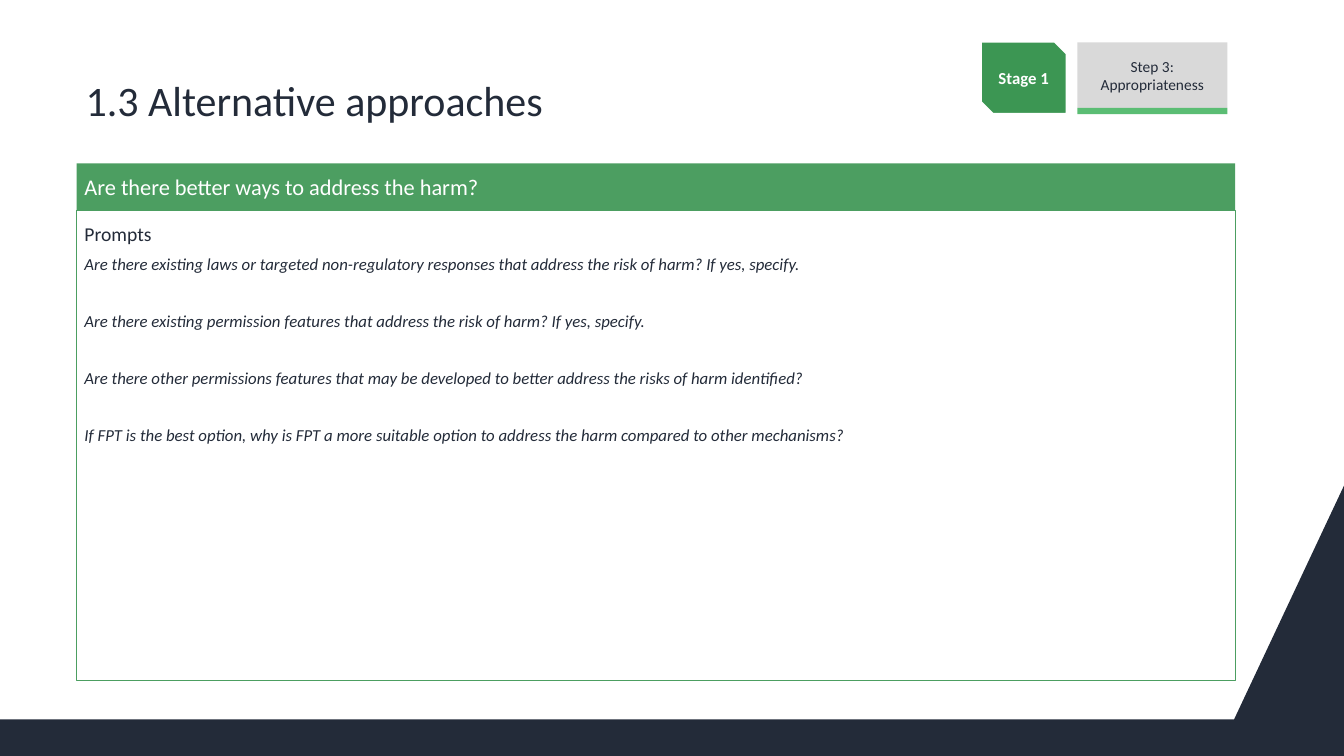
from pptx import Presentation
from pptx import util as u
from pptx.dml.color import RGBColor
from pptx.enum import shapes, text

FONT = "Calibri"
NAVY, WHITE, GREEN = "232B39", "FFFFFF", "4C9E61"
PROMPTS = [
    "Are there existing laws or targeted non-regulatory responses that address the risk of harm? If yes, specify.",
    "Are there existing permission features that address the risk of harm? If yes, specify.",
    "Are there other permissions features that may be developed to better address the risks of harm identified?",
    "If FPT is the best option, why is FPT a more suitable option to address the harm compared to other mechanisms?",
]


def rgb(value):
    return RGBColor.from_string(value)


def paint(sp, fill=None, line=None, width=0.75):
    sp.shadow.inherit = False
    if fill:
        sp.fill.solid()
        sp.fill.fore_color.rgb = rgb(fill)
    else:
        sp.fill.background()
    if line:
        sp.line.color.rgb = rgb(line)
        sp.line.width = u.Pt(width)
    else:
        sp.line.fill.background()


def add_box(s, x, y, w, h, kind=shapes.MSO_SHAPE.RECTANGLE, **style):
    sp = s.shapes.add_shape(kind, u.Cm(x), u.Cm(y), u.Cm(w), u.Cm(h))
    paint(sp, **style)
    return sp


def set_frame(sp, anchor=text.MSO_ANCHOR.MIDDLE, side=0.2, top=0.13):
    tf = sp.text_frame
    tf.word_wrap = True
    tf.vertical_anchor = anchor
    tf.margin_left = tf.margin_right = u.Cm(side)
    tf.margin_top, tf.margin_bottom = u.Cm(top), u.Cm(0.13)
    return tf


def write(tf, words, size, color=NAVY, bold=False, italic=False,
          align=text.PP_ALIGN.LEFT, before=0, new=False):
    p = tf.add_paragraph() if new else tf.paragraphs[0]
    p.alignment = align
    p.space_before = u.Pt(before)
    r = p.add_run()
    r.text = words
    r.font.name, r.font.size = FONT, u.Pt(size)
    r.font.bold, r.font.italic = bold, italic
    r.font.color.rgb = rgb(color)


def footer(s, x, y, w, h):
    band, slope = 0.92, 2.77
    left, top, right, bottom = x, y, x + w, y + h
    outline = [(left, bottom - band), (left, bottom), (right, bottom),
               (right, top), (right - slope, bottom - band)]
    points = [(u.Cm(a), u.Cm(b)) for a, b in outline]
    fb = s.shapes.build_freeform(*points[0], scale=1.0)
    fb.add_line_segments(points[1:], close=True)
    paint(fb.convert_to_shape(), fill=NAVY)


def title(s, x, y, w, h):
    sp = s.shapes.add_textbox(u.Cm(x), u.Cm(y), u.Cm(w), u.Cm(h))
    write(set_frame(sp), "1.3 Alternative approaches", 30)


def question_panel(s, x, y, w, h):
    head = 1.18
    body = add_box(s, x, y + head, w, h - head, line=GREEN)
    tf = set_frame(body, anchor=text.MSO_ANCHOR.TOP, top=0.3)
    write(tf, "Prompts", 14, before=6)
    for i, prompt in enumerate(PROMPTS):
        write(tf, prompt, 12, italic=True, before=26.3 if i else 6, new=True)
    bar = add_box(s, x, y, w, head, fill=GREEN)
    write(set_frame(bar), "Are there better ways to address the harm?", 16, WHITE)


def stage_marker(s, x, y, w, h):
    stage_w, step_x, strip = 2.18, 2.44, 0.16
    center = text.PP_ALIGN.CENTER
    stage = add_box(s, x, y, stage_w, h, shapes.MSO_SHAPE.SNIP_2_DIAG_RECTANGLE,
                    fill="3C9653", line=WHITE, width=2)
    write(set_frame(stage, side=0.25), "Stage 1", 12, WHITE, bold=True, align=center)
    step = add_box(s, x + step_x, y + 0.03, w - step_x, h - strip - 0.03, fill="D9D9D9")
    write(set_frame(step, side=0.25), "Step 3: Appropriateness", 11, align=center)
    add_box(s, x + step_x, y + h - strip, w - step_x, strip, fill="5BBD74")


def main():
    prs = Presentation()
    prs.slide_width, prs.slide_height = u.Cm(33.87), u.Cm(19.05)
    s = prs.slides.add_slide(prs.slide_layouts[6])
    footer(s, 0, 12.24, 33.87, 6.81)
    question_panel(s, 1.93, 4.12, 29.2, 13.02)
    title(s, 1.96, 1.24, 29.2, 2.57)
    stage_marker(s, 24.71, 1.04, 6.22, 1.84)
    prs.save("out.pptx")


if __name__ == "__main__":
    main()
